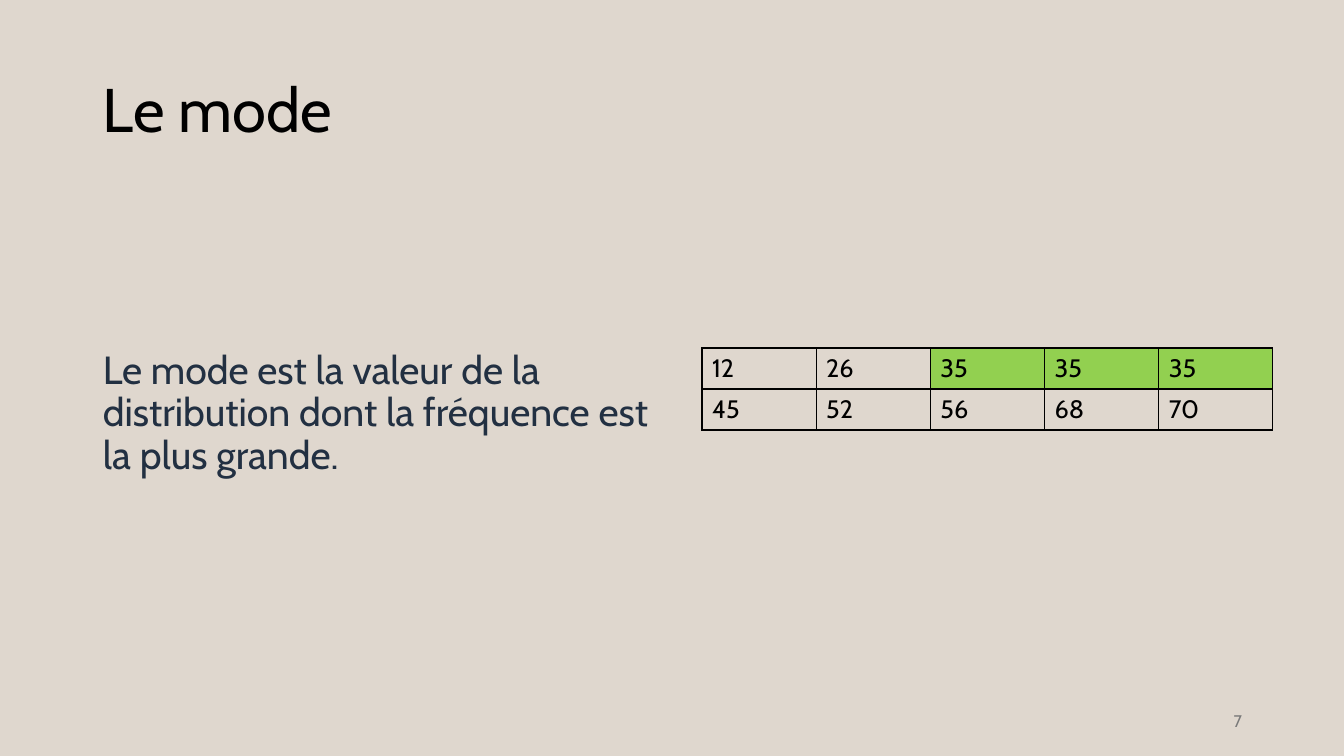
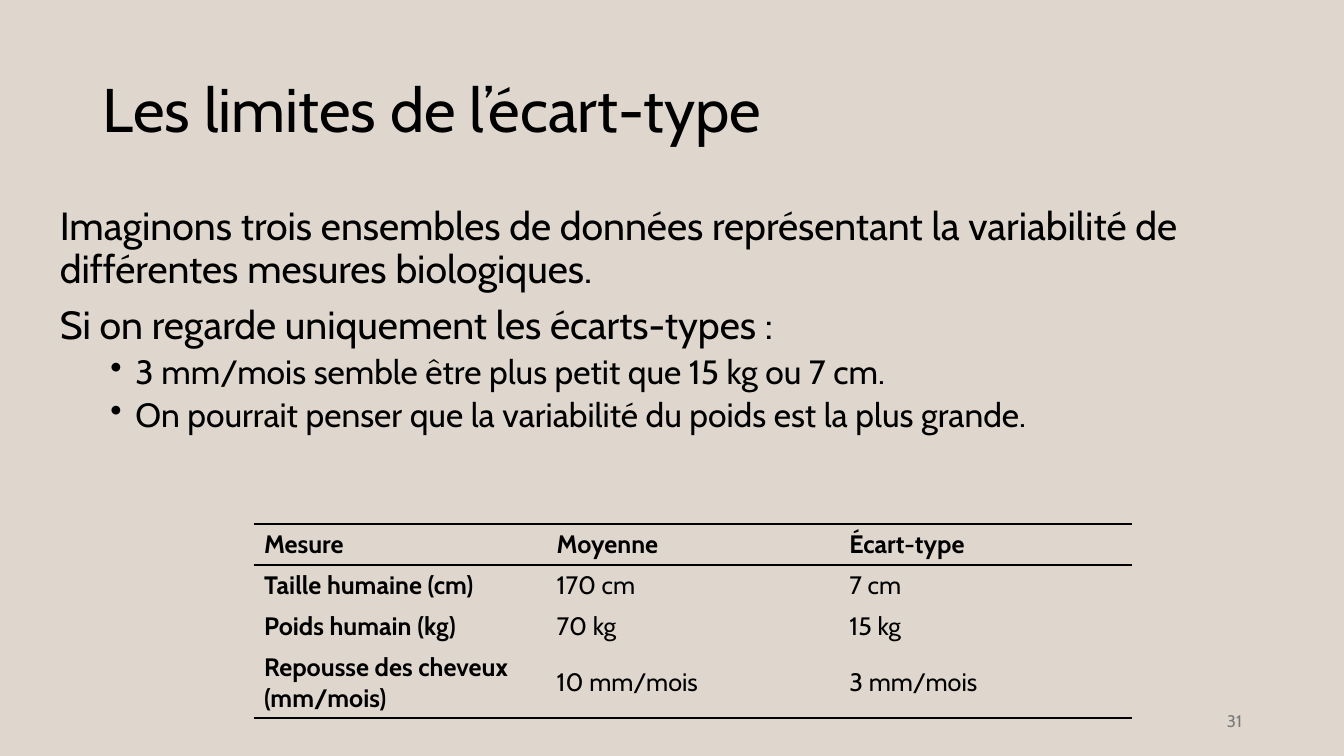
from dataclasses import dataclass

from lxml import etree
from pptx import Presentation
from pptx import util as u
from pptx.dml.color import RGBColor
from pptx.enum import text
from pptx.oxml import ns


@dataclass(frozen=True)
class Theme:
    font: str = "Cabin"
    paper: str = "DFD7CE"
    ink: str = "000000"
    navy: str = "223042"
    grey: str = "797979"
    green: str = "92D050"
    title: int = 44
    body: int = 28
    bullet: int = 24
    cell: int = 18
    number: int = 12


THEME = Theme()
PX = 12192000 / 1344
MIDDLE = text.MSO_ANCHOR.MIDDLE
LEFT, RIGHT = text.PP_ALIGN.LEFT, text.PP_ALIGN.RIGHT


def px(length):
    return u.Emu(round(length * PX))


def write(page, area, lines, size, color=THEME.ink, anchor=MIDDLE, align=LEFT, spacing=0.9, before=0):
    box = page.shapes.add_textbox(*map(px, area))
    frame = box.text_frame
    frame.word_wrap = True
    frame.vertical_anchor = anchor
    frame.text = "\n".join(lines)
    for para in frame.paragraphs:
        para.alignment = align
        para.line_spacing = spacing
        para.space_before = u.Pt(before)
        para.font.name = THEME.font
        para.font.size = u.Pt(size)
        para.font.color.rgb = RGBColor.from_string(color)
    return frame


deck = Presentation()
deck.slide_width, deck.slide_height = px(1344), px(756)
backdrop = deck.slide_master.background.fill
backdrop.solid()
backdrop.fore_color.rgb = RGBColor.from_string(THEME.paper)

SLIDES = [
    {
        "title": "Le mode",
        "number": "7",
        "body": ["Le mode est la valeur de la distribution dont la fréquence est la plus grande."],
        "bullets": [],
        "body_area": (93, 202, 572, 424),
        "body_color": THEME.navy,
        "body_anchor": MIDDLE,
        "table_area": (702, 348, 571, 82),
        "row_heights": [41, 41],
        "rows": [["12", "26", "35", "35", "35"], ["45", "52", "56", "68", "70"]],
        "marked": "35",
        "headed": False,
    },
    {
        "title": "Les limites de l’écart-type",
        "number": "31",
        "body": [
            "Imaginons trois ensembles de données représentant la variabilité de différentes mesures biologiques.",
            "Si on regarde uniquement les écarts-types :",
        ],
        "bullets": [
            "3 mm/mois semble être plus petit que 15 kg ou 7 cm.",
            "On pourrait penser que la variabilité du poids est la plus grande.",
        ],
        "body_area": (50, 202, 1202, 480),
        "body_color": THEME.ink,
        "body_anchor": text.MSO_ANCHOR.TOP,
        "table_area": (254, 524, 878, 194),
        "row_heights": [41, 41, 41, 71],
        "rows": [
            ["Mesure", "Moyenne", "Écart-type"],
            ["Taille humaine (cm)", "170 cm", "7 cm"],
            ["Poids humain (kg)", "70 kg", "15 kg"],
            ["Repousse des cheveux (mm/mois)", "10 mm/mois", "3 mm/mois"],
        ],
        "marked": None,
        "headed": True,
    },
]

for content in SLIDES:
    page = deck.slides.add_slide(deck.slide_layouts[6])
    write(page, (93, 40, 1159, 146), [content["title"]], THEME.title)
    write(page, (950, 701, 302, 40), [content["number"]], THEME.number, THEME.grey,
          align=RIGHT, spacing=1)
    body = write(page, content["body_area"], content["body"] + content["bullets"], THEME.body,
                 content["body_color"], content["body_anchor"], before=10)
    for para in body.paragraphs[len(content["body"]):]:
        para.level = 1
        para.space_before = u.Pt(5)
        para.font.size = u.Pt(THEME.bullet)
        layout = para._p.get_or_add_pPr()
        layout.set("marL", str(u.Inches(0.75)))
        layout.set("indent", str(-u.Inches(0.25)))
        bullet = etree.Element(ns.qn("a:buChar"), char="•")
        layout.find(ns.qn("a:defRPr")).addprevious(bullet)

    rows, headed = content["rows"], content["headed"]
    columns = len(rows[0])
    table = page.shapes.add_table(len(rows), columns, *map(px, content["table_area"])).table
    table.first_row = table.horz_banding = False
    for column in table.columns:
        column.width = px(content["table_area"][2] / columns)
    for row, height in zip(table.rows, content["row_heights"]):
        row.height = px(height)

    for r, values in enumerate(rows):
        for c, value in enumerate(values):
            cell = table.cell(r, c)
            cell.vertical_anchor = MIDDLE
            cell.text_frame.text = value
            font = cell.text_frame.paragraphs[0].runs[0].font
            font.name, font.size = THEME.font, u.Pt(THEME.cell)
            font.bold = headed and (r == 0 or c == 0)
            font.color.rgb = RGBColor.from_string(THEME.ink)

            ruled = {
                "L": not headed,
                "R": not headed,
                "T": not headed or r < 2,
                "B": not headed or r in (0, len(rows) - 1),
            }
            properties = cell._tc.get_or_add_tcPr()
            for side, visible in ruled.items():
                border = etree.SubElement(properties, ns.qn(f"a:ln{side}"), w=str(u.Pt(1)))
                if visible:
                    paint = etree.SubElement(border, ns.qn("a:solidFill"))
                    etree.SubElement(paint, ns.qn("a:srgbClr"), val=THEME.ink)
                else:
                    etree.SubElement(border, ns.qn("a:noFill"))
            if value == content["marked"]:
                cell.fill.solid()
                cell.fill.fore_color.rgb = RGBColor.from_string(THEME.green)
            else:
                cell.fill.background()

deck.save("out.pptx")
